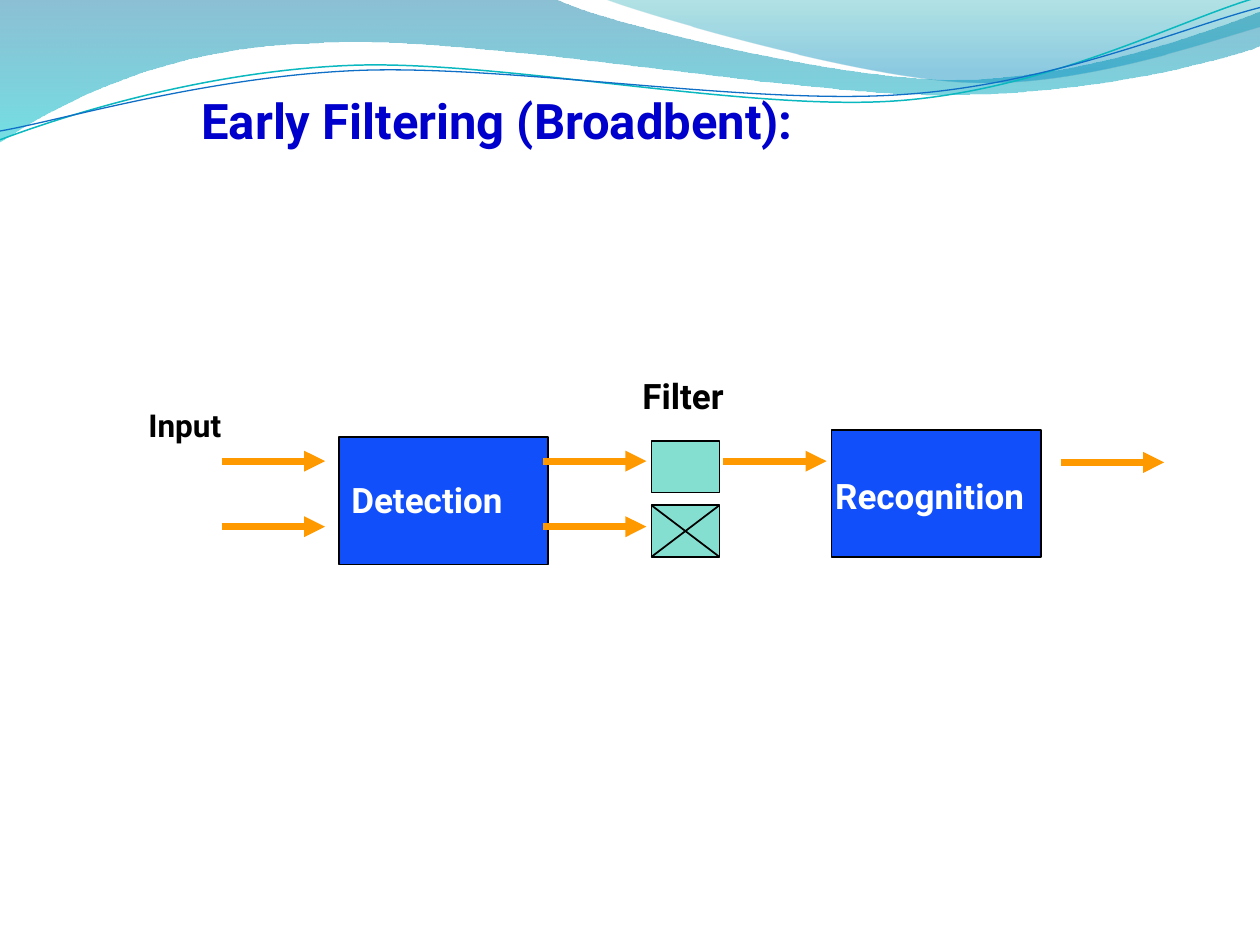
"""Build the early filtering slide: wave header, title and flow diagram."""
from lxml import etree
from pptx import Presentation
from pptx.dml.color import RGBColor
from pptx.enum.shapes import MSO_CONNECTOR, MSO_SHAPE
from pptx.enum.text import MSO_AUTO_SIZE
from pptx.oxml.ns import qn
from pptx.util import Inches, Pt

LINE = MSO_CONNECTOR.STRAIGHT
RECT = MSO_SHAPE.RECTANGLE
GROW = MSO_AUTO_SIZE.SHAPE_TO_FIT_TEXT

THEME = {
    "font": "Roboto", "title": "0000CC", "ink": "000000", "light": "FFFFFF",
    "stage": "114FFB", "gate": "85DFD0", "arrow": "FF9900",
    "big": 28, "mid": 20, "small": 18, "edge": 1, "thick": 4,
}

BANDS = [
    ([[(0, 0)], [(4.4, -0.01)],
      [(4.76, 0.17), (6.64, 0.63), (7.58, 0.63)],
      [(8.53, 0.63), (9.58, 0.26), (10, 0.09)], [(10.01, 0.36)],
      [(9.83, 0.44), (8.7, 0.76), (7.46, 0.75)],
      [(6.22, 0.75), (3.82, 0.28), (2.57, 0.34)],
      [(1.29, 0.36), (0.46, 0.83), (-0.01, 1.13)], [(0, 0)]],
     [(0, "0074A1", 45), (1, "00C6CF", 55)]),
    ([[(4.79, -0.01)],
      [(5.09, 0.11), (6.82, 0.62), (7.69, 0.65)],
      [(8.56, 0.69), (9.61, 0.32), (10, 0.21)], [(10, 0)], [(4.79, -0.01)]],
     [(0, "00A1A9", 30), (0.8, "008BBF", 45)]),
]
WAVES = [
    ([[(0, 1.11)],
      [(0.48, 0.93), (1.58, 0.57), (2.77, 0.52)],
      [(3.95, 0.47), (5.93, 0.89), (7.13, 0.8)],
      [(8.33, 0.71), (9.38, 0.15), (9.98, -0.02)]], "0AB8BF", 0.85),
    ([[(0, 1.04)],
      [(0.47, 0.96), (1.64, 0.61), (2.83, 0.56)],
      [(4.03, 0.51), (5.97, 0.84), (7.17, 0.75)],
      [(8.36, 0.67), (9.41, 0.21), (10, 0.06)]], "0F6FC6", 0.75),
]

STAGE, GATE = (1.66, 1.01), (0.54, 0.41)
GATE_X, GATE_Y, STEP = 5.17, 3.5, 0.51
BOXES = [
    (2.69, 3.47, STAGE, "stage"),
    (6.6, 3.41, STAGE, "stage"),
    (GATE_X, GATE_Y + STEP, GATE, "gate"),
    (GATE_X, GATE_Y, GATE, "gate"),
]
LABELS = [
    ("Detection", 2.69, 3.75, 1.67, 0.43, "mid", "light"),
    ("Input", 1.08, 3.17, 0.87, 0.4, "small", "ink"),
    ("Filter", 5, 2.92, 1.11, 0.43, "mid", "ink"),
    ("Recognition", 6.53, 3.72, 1.91, 0.43, "mid", "light"),
    ("Early Filtering (Broadbent):", 1.5, 0.67, 6.28, 0.56, "big", "title"),
]
REACH, TOP, LOW = 0.82, 3.66, 4.18
ARROWS = [(5.74, TOP), (4.31, TOP), (4.31, LOW),
          (1.76, TOP), (1.76, LOW), (8.42, 3.67)]


def paint(part, name):
    part.rgb = RGBColor.from_string(THEME.get(name, name))


def add_curve(slide, path, close):
    points = [(Inches(x), Inches(y)) for seg in path for x, y in seg]
    build = slide.shapes.build_freeform(*points[0])
    build.add_line_segments(points[1:], close=close)
    shape = build.convert_to_shape()
    shape.shadow.inherit = False
    nodes = iter(list(shape._element.iter(qn("a:lnTo"))))
    for seg in path[1:]:
        group = [next(nodes) for _ in seg]
        if len(seg) == 3:
            bend = etree.Element(qn("a:cubicBezTo"))
            group[0].addprevious(bend)
            for node in group:
                bend.append(node[0])
                node.getparent().remove(node)
    return shape


def add_band(slide, path, stops):
    shape = add_curve(slide, path, True)
    shape.line.fill.background()
    shape.fill.gradient()
    shape.fill.gradient_angle = 270
    for stop, (place, hue, _) in zip(shape.fill.gradient_stops, stops):
        stop.position = place
        paint(stop.color, hue)
    marks = shape._element.spPr.iter(qn("a:srgbClr"))
    for mark, (_, _, alpha) in zip(marks, stops):
        etree.SubElement(mark, qn("a:alpha")).set("val", str(alpha * 1000))


def add_wave(slide, path, hue, width):
    shape = add_curve(slide, path, False)
    shape.fill.background()
    paint(shape.line.color, hue)
    shape.line.width = Pt(width)


def add_box(slide, x, y, size, hue):
    spot = [Inches(v) for v in (x, y, *size)]
    shape = slide.shapes.add_shape(RECT, *spot)
    shape.shadow.inherit = False
    shape.fill.solid()
    paint(shape.fill.fore_color, hue)
    paint(shape.line.color, "ink")
    shape.line.width = Pt(THEME["edge"])


def add_label(slide, text, x, y, w, h, size, hue):
    box = slide.shapes.add_textbox(*[Inches(v) for v in (x, y, w, h)])
    frame = box.text_frame
    frame.word_wrap = True
    frame.auto_size = GROW
    run = frame.paragraphs[0].add_run()
    run.text = text
    run.font.name = THEME["font"]
    run.font.size = Pt(THEME[size])
    run.font.bold = True
    paint(run.font.color, hue)


def add_line(slide, start, end, hue, width, head=False):
    spot = [Inches(v) for v in (*start, *end)]
    link = slide.shapes.add_connector(LINE, *spot)
    paint(link.line.color, hue)
    link.line.width = Pt(THEME[width])
    if head:
        tip = etree.SubElement(link.line._get_or_add_ln(), qn("a:tailEnd"))
        tip.set("type", "triangle")
    etree.SubElement(link._element.spPr, qn("a:effectLst"))


def main():
    deck = Presentation()
    deck.slide_width, deck.slide_height = Inches(10), Inches(7.5)
    slide = deck.slides.add_slide(deck.slide_layouts[6])
    for band in BANDS:
        add_band(slide, *band)
    for wave in WAVES:
        add_wave(slide, *wave)
    for box in BOXES:
        add_box(slide, *box)
    for label in LABELS:
        add_label(slide, *label)
    for x, y in ARROWS:
        add_line(slide, (x, y), (x + REACH, y), "arrow", "thick", True)
    left, right = GATE_X, GATE_X + GATE[0]
    top, base = GATE_Y + STEP, GATE_Y + STEP + GATE[1]
    add_line(slide, (left, top), (right, base), "ink", "edge")
    add_line(slide, (left, base), (right, top), "ink", "edge")
    deck.save("out.pptx")


if __name__ == "__main__":
    main()
